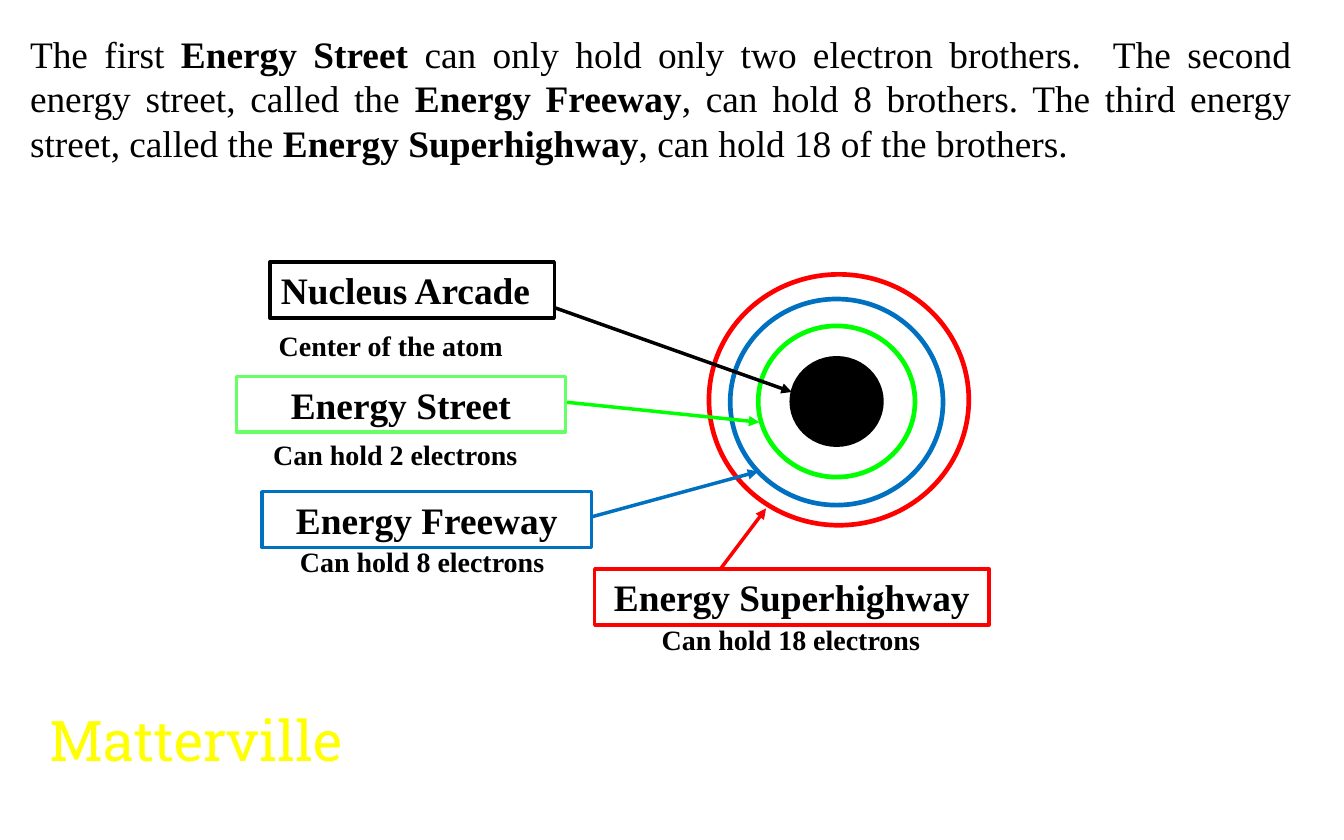
from dataclasses import dataclass

from lxml import etree
from pptx import Presentation
from pptx import util as u
from pptx.dml.color import RGBColor
from pptx.enum import shapes, text
from pptx.oxml import ns

Inches = u.Inches
ALIGN = text.PP_ALIGN
ANCHOR = text.MSO_ANCHOR


@dataclass(frozen=True)
class Theme:
    black: str = "000000"
    white: str = "FFFFFF"
    red: str = "FF0000"
    blue: str = "0070C0"
    green: str = "00FF00"
    light_green: str = "66FF66"
    yellow: str = "FFFF00"
    body_font: str = "Times New Roman"
    title_font: str = "Roboto Slab"
    title: int = 36
    body: int = 24
    caption: int = 18
    ring_line: float = 3
    box_line: float = 2.25


T = Theme()

INTRO = [
    ("The first ", False),
    ("Energy Street ", True),
    ("can only hold only two electron brothers.  The second energy street, called the ", False),
    ("Energy Freeway", True),
    (", can hold 8 brothers. The third energy street, called the ", False),
    ("Energy Superhighway", True),
    (", can hold 18 of the brothers.", False),
]

RINGS = [
    (6.33, 2.45, 2.32, 2.24, T.white, T.red),
    (6.52, 2.67, 1.9, 1.84, T.white, T.blue),
    (6.77, 2.91, 1.4, 1.35, T.white, T.green),
    (7.07, 3.2, 0.8, 0.77, T.black, T.black),
]

ARROWS = [
    (6.41, 5.11, 6.84, 4.54, T.red),
    (4.95, 3.58, 6.78, 3.77, T.green),
    (5.08, 4.67, 6.77, 4.21, T.blue),
    (4.96, 2.75, 7.07, 3.5, T.black),
]

BOXES = [
    ("Nucleus Arcade", 2.41, 2.34, 2.54, T.black, ALIGN.LEFT),
    ("Energy Street", 2.11, 3.36, 2.94, T.light_green, ALIGN.CENTER),
    ("Energy Freeway", 2.34, 4.39, 2.94, T.blue, ALIGN.CENTER),
    ("Energy Superhighway", 5.31, 5.08, 3.52, T.red, ALIGN.CENTER),
]

CAPTIONS = [
    ("Center of the atom", 2.39, 2.88, 3.22),
    ("Can hold 2 electrons", 2.34, 3.86, 3.08),
    ("Can hold 8 electrons", 2.58, 4.81, 3.46),
    ("Can hold 18 electrons", 5.81, 5.51, 3.46),
]


def rgb(color):
    return RGBColor.from_string(color)


def write(sp, runs, size, align=ALIGN.LEFT, anchor=ANCHOR.TOP, wrap=True,
          font=T.body_font, color=T.black):
    tf = sp.text_frame
    tf.word_wrap = wrap
    tf.vertical_anchor = anchor
    p = tf.paragraphs[0]
    p.alignment = align
    for words, bold in runs:
        r = p.add_run()
        r.text = words
        r.font.name = font
        r.font.size = u.Pt(size)
        r.font.bold = bold
        r.font.color.rgb = rgb(color)
    return p


def add_text(s, x, y, w, h, runs, size, **style):
    sp = s.shapes.add_textbox(Inches(x), Inches(y), Inches(w), Inches(h))
    return write(sp, runs, size, **style)


def add_outlined(parent, kind, x, y, w, h, fill, line, width):
    sp = parent.shapes.add_shape(kind, Inches(x), Inches(y), Inches(w), Inches(h))
    sp.shadow.inherit = False
    sp.fill.solid()
    sp.fill.fore_color.rgb = rgb(fill)
    sp.line.color.rgb = rgb(line)
    sp.line.width = u.Pt(width)
    return sp


def add_arrow(s, x1, y1, x2, y2, color):
    c = s.shapes.add_connector(shapes.MSO_CONNECTOR.STRAIGHT,
                               Inches(x1), Inches(y1), Inches(x2), Inches(y2))
    c.line.color.rgb = rgb(color)
    c.line.width = u.Pt(T.box_line)
    etree.SubElement(c.line._get_or_add_ln(), ns.qn("a:tailEnd"), type="triangle")
    etree.SubElement(c._element.spPr, ns.qn("a:effectLst"))


def outline_text(r, color, width):
    ln = etree.Element(ns.qn("a:ln"), w=str(u.Pt(width)))
    fill = etree.SubElement(ln, ns.qn("a:solidFill"))
    etree.SubElement(fill, ns.qn("a:srgbClr"), val=color)
    r.font._element.insert(0, ln)


def add_atom(s):
    atom = s.shapes.add_group_shape()
    for x, y, w, h, fill, line in RINGS:
        add_outlined(atom, shapes.MSO_SHAPE.OVAL, x, y, w, h, fill, line, T.ring_line)


def add_box(s, label, x, y, w, color, align):
    sp = add_outlined(s, shapes.MSO_SHAPE.RECTANGLE, x, y, w, 0.5,
                      T.white, color, T.box_line)
    write(sp, [(label, True)], T.body, align=align)


def main():
    prs = Presentation()
    prs.slide_width, prs.slide_height = Inches(12), Inches(7.5)
    s = prs.slides.add_slide(prs.slide_layouts[6])

    add_text(s, 0.17, 0.22, 11.46, 1.31, INTRO, T.body,
             align=ALIGN.JUSTIFY, anchor=ANCHOR.MIDDLE)
    p = add_text(s, 0.25, 6.25, 3, 0.83, [("Matterville", False)], T.title,
                 align=ALIGN.CENTER, wrap=False, font=T.title_font, color=T.yellow)
    outline_text(p.runs[0], T.black, 2)

    add_atom(s)
    for arrow in ARROWS:
        add_arrow(s, *arrow)
    for label, x, y, w in CAPTIONS:
        add_text(s, x, y, w, 0.4, [(label, True)], T.caption)
    for box in BOXES:
        add_box(s, *box)

    prs.save("out.pptx")


if __name__ == "__main__":
    main()
